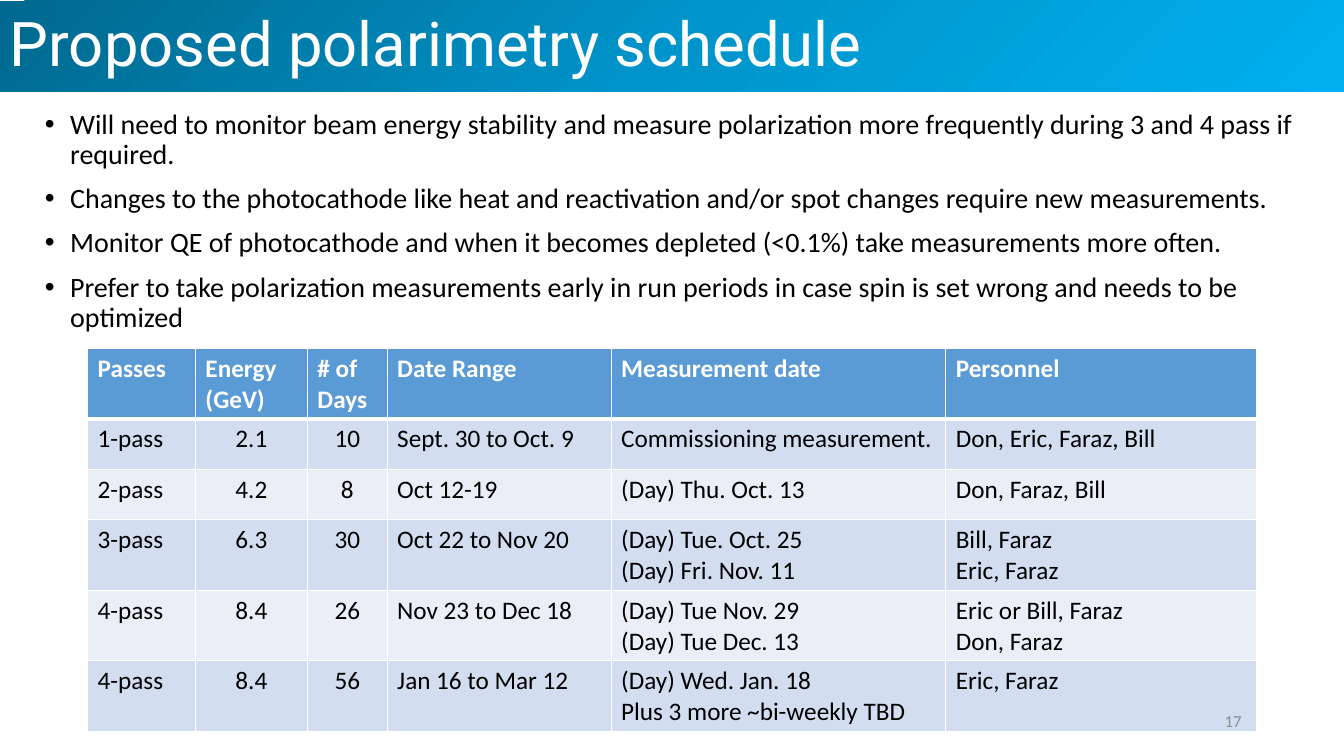
from copy import deepcopy

from lxml.etree import SubElement
from pptx import Presentation
from pptx.dml.color import RGBColor
from pptx.enum.shapes import MSO_SHAPE as Preset
from pptx.enum.text import MSO_ANCHOR as Anchor, PP_ALIGN as Align
from pptx.oxml import parse_xml
from pptx.oxml.ns import nsdecls, qn
from pptx.util import Pt

WHITE = RGBColor(0xFF, 0xFF, 0xFF)
BLACK = RGBColor(0, 0, 0)
GRAY = RGBColor(0x8C, 0x8C, 0x8C)
HEADER_BLUE = RGBColor(0x5B, 0x9B, 0xD5)
BANDS = [RGBColor(0xD2, 0xDE, 0xEF), RGBColor(0xEA, 0xEF, 0xF7)]
TITLE_GRADIENT = [
    (0, RGBColor(0x00, 0x68, 0x8E)),
    (0.5, RGBColor(0x00, 0x94, 0xCA)),
    (1, RGBColor(0x00, 0xB0, 0xF0)),
]

BULLETS = [
    "Will need to monitor beam energy stability and measure polarization more "
    "frequently during 3 and 4 pass if required.",
    "Changes to the photocathode like heat and reactivation and/or spot changes "
    "require new measurements.",
    "Monitor QE of photocathode and when it becomes depleted (<0.1%) take "
    "measurements more often.",
    "Prefer to take polarization measurements early in run periods in case spin "
    "is set wrong and needs to be optimized",
]
COLUMN_WIDTHS = [77, 80, 57, 160, 239, 222]
CENTERED_COLUMNS = (1, 2)
ROW_HEIGHT = 36
SCHEDULE = [
    ["Passes", "Energy (GeV)", "# of Days", "Date Range", "Measurement date", "Personnel"],
    ["1-pass", "2.1", "10", "Sept. 30 to Oct. 9", "Commissioning measurement.",
     "Don, Eric, Faraz, Bill"],
    ["2-pass", "4.2", "8", "Oct 12-19", "(Day) Thu. Oct. 13", "Don, Faraz, Bill"],
    ["3-pass", "6.3", "30", "Oct 22 to Nov 20",
     "(Day) Tue. Oct. 25\n(Day) Fri. Nov. 11", "Bill, Faraz\nEric, Faraz"],
    ["4-pass", "8.4", "26", "Nov 23 to Dec 18",
     "(Day) Tue Nov. 29\n(Day) Tue Dec. 13", "Eric or Bill, Faraz\nDon, Faraz"],
    ["4-pass", "8.4", "56", "Jan 16 to Mar 12",
     "(Day) Wed. Jan. 18\nPlus 3 more ~bi-weekly TBD", "Eric, Faraz"],
]


def write_text(frame, text, size, color=BLACK, font="Calibri", bold=False,
               align=Align.LEFT, line_spacing=None, space_before=0, bullet=False):
    """Fill a text frame, one paragraph per line of text."""
    frame.word_wrap = True
    frame.text = text
    for paragraph in frame.paragraphs:
        paragraph.alignment = align
        paragraph.line_spacing = line_spacing
        paragraph.space_before = Pt(space_before)
        paragraph.font.size = Pt(size)
        for run in paragraph.runs:
            run.font.name = font
            run.font.size = Pt(size)
            run.font.bold = bold
            run.font.color.rgb = color
        if bullet:
            properties = paragraph._p.get_or_add_pPr()
            properties.set("marL", str(Pt(18)))
            properties.set("indent", str(Pt(-18)))
            bullet_font = parse_xml(f'<a:buFont {nsdecls("a")} typeface="Arial"/>')
            bullet_char = parse_xml(f'<a:buChar {nsdecls("a")} char="•"/>')
            position = len(properties.findall(qn("a:lnSpc")) + properties.findall(qn("a:spcBef")))
            properties.insert(position, bullet_font)
            properties.insert(position + 1, bullet_char)


def fill_title_gradient(shape):
    shape.fill.gradient()
    shape.fill.gradient_angle = 315
    stop_list = shape._element.spPr.find(".//" + qn("a:gsLst"))
    stop_list.append(deepcopy(stop_list[-1]))
    for stop, (position, color) in zip(shape.fill.gradient_stops, TITLE_GRADIENT):
        stop.position = position
        stop.color.rgb = color


def add_title_bar(slide, left, top, width, height):
    shape = slide.shapes.add_shape(Preset.RECTANGLE, Pt(left), Pt(top), Pt(width), Pt(height))
    shape.shadow.inherit = False
    shape.line.fill.background()
    fill_title_gradient(shape)
    shape.text_frame.vertical_anchor = Anchor.MIDDLE
    write_text(shape.text_frame, "Proposed polarimetry schedule", 44, WHITE, "Roboto",
               line_spacing=0.9)


def add_text_box(slide, left, top, width, height, text, anchor=Anchor.TOP, **text_format):
    box = slide.shapes.add_textbox(Pt(left), Pt(top), Pt(width), Pt(height))
    box.text_frame.vertical_anchor = anchor
    write_text(box.text_frame, text, **text_format)


def set_borders(cell, bottom_width):
    properties = cell._tc.get_or_add_tcPr()
    widths = {"lnL": 1, "lnR": 1, "lnT": 1, "lnB": bottom_width}
    for position, (side, width) in enumerate(widths.items()):
        line = SubElement(properties, qn(f"a:{side}"), w=str(Pt(width)))
        fill = SubElement(line, qn("a:solidFill"))
        SubElement(fill, qn("a:srgbClr"), val=str(WHITE))
        properties.insert(position, line)


def add_schedule_table(slide, left, top):
    table = slide.shapes.add_table(
        len(SCHEDULE), len(COLUMN_WIDTHS), Pt(left), Pt(top),
        Pt(sum(COLUMN_WIDTHS)), Pt(ROW_HEIGHT * len(SCHEDULE))).table
    for column, width in zip(table.columns, COLUMN_WIDTHS):
        column.width = Pt(width)
    for row_index, row in enumerate(SCHEDULE):
        is_header = row_index == 0
        table.rows[row_index].height = Pt(ROW_HEIGHT)
        for column_index, text in enumerate(row):
            cell = table.cell(row_index, column_index)
            centered = column_index in CENTERED_COLUMNS and not is_header
            write_text(cell.text_frame, text, 18, WHITE if is_header else BLACK,
                       bold=is_header, align=Align.CENTER if centered else Align.LEFT)
            cell.fill.solid()
            cell.fill.fore_color.rgb = HEADER_BLUE if is_header else BANDS[(row_index - 1) % 2]
            set_borders(cell, 3 if is_header else 1)


def main():
    presentation = Presentation()
    presentation.slide_width, presentation.slide_height = Pt(960), Pt(540)
    slide = presentation.slides.add_slide(presentation.slide_layouts[6])
    add_title_bar(slide, 0, 0.7, 960, 65)
    add_text_box(slide, 25, 75, 909.5, 183.5, "\n".join(BULLETS), size=20,
                 line_spacing=0.9, space_before=10, bullet=True)
    add_schedule_table(slide, 62.6, 248.7)
    add_text_box(slide, 678, 500.5, 216, 28.75, "17", anchor=Anchor.MIDDLE, size=12,
                 color=GRAY, align=Align.RIGHT)
    presentation.save("out.pptx")


if __name__ == "__main__":
    main()
